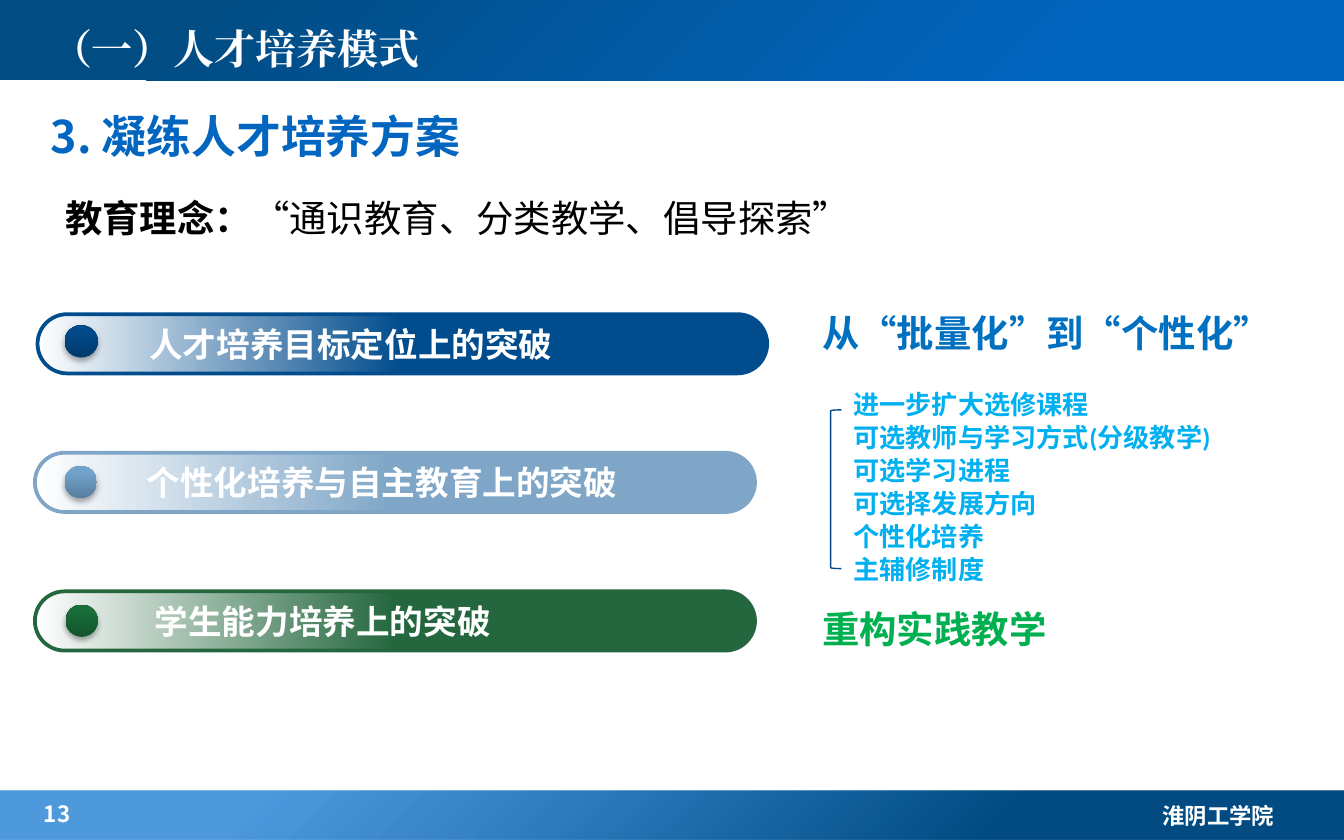
"""Build the slide on refining the talent training plan."""
from dataclasses import dataclass
from typing import Any, NamedTuple

import pptx
import pptx.dml.color
import pptx.enum.shapes
import pptx.enum.text
import pptx.oxml
import pptx.oxml.ns
import pptx.util
from lxml import etree

Cm = pptx.util.Cm
SHAPE = pptx.enum.shapes.MSO_SHAPE
ANCHOR = pptx.enum.text.MSO_ANCHOR
ALIGN = pptx.enum.text.PP_ALIGN
NAMESPACE = pptx.oxml.ns.nsdecls("a")
SANS = "Noto Sans CJK SC"
WHITE = "FFFFFF"


class Place(NamedTuple):
    """Left, top, width and height in centimetres."""
    left: float
    top: float
    width: float
    height: float

    def lengths(self) -> list[int]:
        """Return the four values as slide lengths."""
        return [Cm(value) for value in self]


class Span(NamedTuple):
    """A run of text and its format."""
    text: str
    size: float
    color: str
    font: str = SANS
    bold: bool = True


class Stop(NamedTuple):
    """A gradient stop, with position and opacity in percent."""
    position: int
    color: str
    opacity: int = 100


@dataclass
class Label:
    """A single-line text box."""
    place: Place
    spans: list[Span]
    wrap: bool = True
    indent: float = 0.25
    spacing: float = 1.0


@dataclass
class Bar:
    """A rounded bar with a round marker."""
    place: Place
    color: str
    indent: float
    spans: list[Span]
    dot: Place
    dot_colors: tuple[str, str, str]


TO_CORNER = '<a:path path="circle"><a:fillToRect l="100000" t="100000"/></a:path>'
BANDS = [
    (Place(0, 14.94, 25.4, 0.94), [Stop(26, "014C83"), Stop(80, "026DCE", 70)]),
    (Place(0, -0.08, 25.4, 1.6), [Stop(21, "0265BF"), Stop(86, "014C83")]),
]
LABELS = [
    Label(Place(0.51, 15.01, 3.99, 0.66), [Span("13", 12, WHITE)], indent=0.32),
    Label(Place(21.72, 15.04, 3.6, 0.66), [Span("淮阴工学院", 12, WHITE)]),
    Label(Place(0.71, 1.93, 8.69, 1.27), [Span("3. 凝练人才培养方案", 24, "0265BF")], wrap=False),
    Label(Place(0.71, 3.15, 16.9, 1.6),
          [Span("教育理念：", 20, "000000"),
           Span("“通识教育、分类教学、倡导探索”", 20, "000000", bold=False)],
          indent=0.52, spacing=1.5),
    Label(Place(15.29, 5.74, 9.12, 1.12), [Span("从“批量化”到“个性化”", 20, "0070C0")], wrap=False),
    Label(Place(15.29, 11.33, 4.83, 1.12), [Span("重构实践教学", 20, "00B050")], wrap=False),
]
BARS = [
    Bar(Place(0.71, 5.94, 13.79, 1.12), "014C8D", 1.95,
        [Span("人才培养目标定", 18, WHITE), Span("位上的突破", 18, WHITE, "Cabin")],
        Place(1.22, 6.15, 0.63, 0.61), ("00396A", "004A8A", "004A8A")),
    Bar(Place(0.66, 8.56, 13.61, 1.12), "7FA6C7", 1.95,
        [Span("个性化培养与自主教育上的突破", 18, WHITE)],
        Place(1.22, 8.81, 0.61, 0.61), ("577D9D", "71A2CB", "6FA3CE")),
    Bar(Place(0.66, 11.18, 13.61, 1.12), "24673E", 2.1,
        [Span("学生能力培养上的突破", 18, WHITE)],
        Place(1.24, 11.43, 0.61, 0.61), ("13542D", "196E3A", "18703A")),
]
MEASURES = ["进一步扩大选修课程", "可选教师与学习方式(分级教学)", "可选学习进程",
            "可选择发展方向", "个性化培养", "主辅修制度"]


def rgb(color: str) -> pptx.dml.color.RGBColor:
    """Turn a hex string into a colour."""
    return pptx.dml.color.RGBColor.from_string(color)


def write(para: Any, spans: list[Span]) -> None:
    """Add formatted runs to a paragraph."""
    for span in spans:
        run = para.add_run()
        run.text = span.text
        run.font.size = pptx.util.Pt(span.size)
        run.font.name = span.font
        run.font.bold = span.bold
        run.font.color.rgb = rgb(span.color)
        east = etree.SubElement(run.font._element, pptx.oxml.ns.qn("a:ea"))
        east.set("typeface", span.font)


def set_gradient(shape: Any, stops: list[Stop], direction: str) -> None:
    """Fill a shape with a gradient."""
    shape.fill.background()
    listing = "".join(
        f'<a:gs pos="{stop.position * 1000}"><a:srgbClr val="{stop.color}">'
        f'<a:alpha val="{stop.opacity * 1000}"/></a:srgbClr></a:gs>' for stop in stops)
    gradient = pptx.oxml.parse_xml(
        f'<a:gradFill {NAMESPACE} rotWithShape="1"><a:gsLst>{listing}</a:gsLst>'
        f'{direction}</a:gradFill>')
    properties = shape.element.spPr
    properties.replace(properties.find(pptx.oxml.ns.qn("a:noFill")), gradient)


def add_shape(shapes: Any, kind: Any, place: Place, line: str = "", width: float = 0) -> Any:
    """Add a plain shape, outlined when a line colour is given."""
    shape = shapes.add_shape(kind, *place.lengths())
    shape.shadow.inherit = False
    shape.fill.background()
    if line:
        shape.line.color.rgb = rgb(line)
        shape.line.width = pptx.util.Pt(width)
    else:
        shape.line.fill.background()
    return shape


def add_label(page: Any, label: Label) -> None:
    """Add a text box."""
    frame = page.shapes.add_textbox(*label.place.lengths()).text_frame
    frame.word_wrap = label.wrap
    frame.margin_left = Cm(label.indent)
    para = frame.paragraphs[0]
    para.line_spacing = label.spacing
    write(para, label.spans)


def add_bar(page: Any, bar: Bar) -> None:
    """Add a bar grouped with its marker."""
    group = page.shapes.add_group_shape()
    body = add_shape(group.shapes, SHAPE.ROUNDED_RECTANGLE, bar.place, bar.color, 2)
    body.adjustments[0] = 0.5
    set_gradient(body, [Stop(50, bar.color), Stop(100, WHITE)], '<a:lin ang="10800000" scaled="0"/>')
    frame = body.text_frame
    frame.margin_left = Cm(bar.indent)
    frame.vertical_anchor = ANCHOR.MIDDLE
    para = frame.paragraphs[0]
    para.alignment = ALIGN.LEFT
    write(para, bar.spans)

    dot = add_shape(group.shapes, SHAPE.OVAL, bar.dot)
    stops = [Stop(position, color) for position, color in zip((0, 80, 100), bar.dot_colors)]
    set_gradient(dot, stops, '<a:lin ang="16200000" scaled="0"/>')
    effects = dot.element.spPr.find(pptx.oxml.ns.qn("a:effectLst"))
    effects.append(pptx.oxml.parse_xml(
        f'<a:outerShdw {NAMESPACE} blurRad="39370" dist="22860" dir="5400000" rotWithShape="0">'
        '<a:srgbClr val="000000"><a:alpha val="35000"/></a:srgbClr></a:outerShdw>'))


def add_measures(page: Any, place: Place) -> None:
    """Add the one-column table of measures."""
    table = page.shapes.add_table(len(MEASURES), 1, *place.lengths()).table
    table.first_row = table.horz_banding = False
    for row, measure in zip(table.rows, MEASURES):
        cell = row.cells[0]
        cell.fill.solid()
        cell.fill.fore_color.rgb = rgb(WHITE)
        cell.margin_left = cell.margin_right = cell.margin_top = Cm(0.03)
        cell.margin_bottom = 0
        cell.vertical_anchor = ANCHOR.MIDDLE
        write(cell.text_frame.paragraphs[0], [Span(measure, 14, "00B0F0", "Calibri")])


def main() -> None:
    """Build and save the deck."""
    deck = pptx.Presentation()
    deck.slide_width, deck.slide_height = Cm(25.4), Cm(15.88)
    page = deck.slides.add_slide(deck.slide_layouts[5])
    for place, stops in BANDS:
        set_gradient(add_shape(page.shapes, SHAPE.RECTANGLE, place), stops, TO_CORNER)

    title = page.shapes.title
    title.element.getparent().append(title.element)
    title.left, title.top, title.width, title.height = Place(0.71, 0, 16.2, 1.8).lengths()
    title.text_frame.vertical_anchor = ANCHOR.MIDDLE
    para = title.text_frame.paragraphs[0]
    para.alignment = ALIGN.LEFT
    write(para, [Span("（一）人才培养模式", 22, WHITE, "Times New Roman")])

    for label in LABELS:
        add_label(page, label)
    for bar in BARS:
        add_bar(page, bar)
    add_measures(page, Place(16.1, 7.34, 7.26, 3.68))
    add_shape(page.shapes, SHAPE.LEFT_BRACKET, Place(15.7, 7.75, 0.2, 3), "004A8B", 0.75)
    deck.save("out.pptx")


if __name__ == "__main__":
    main()
